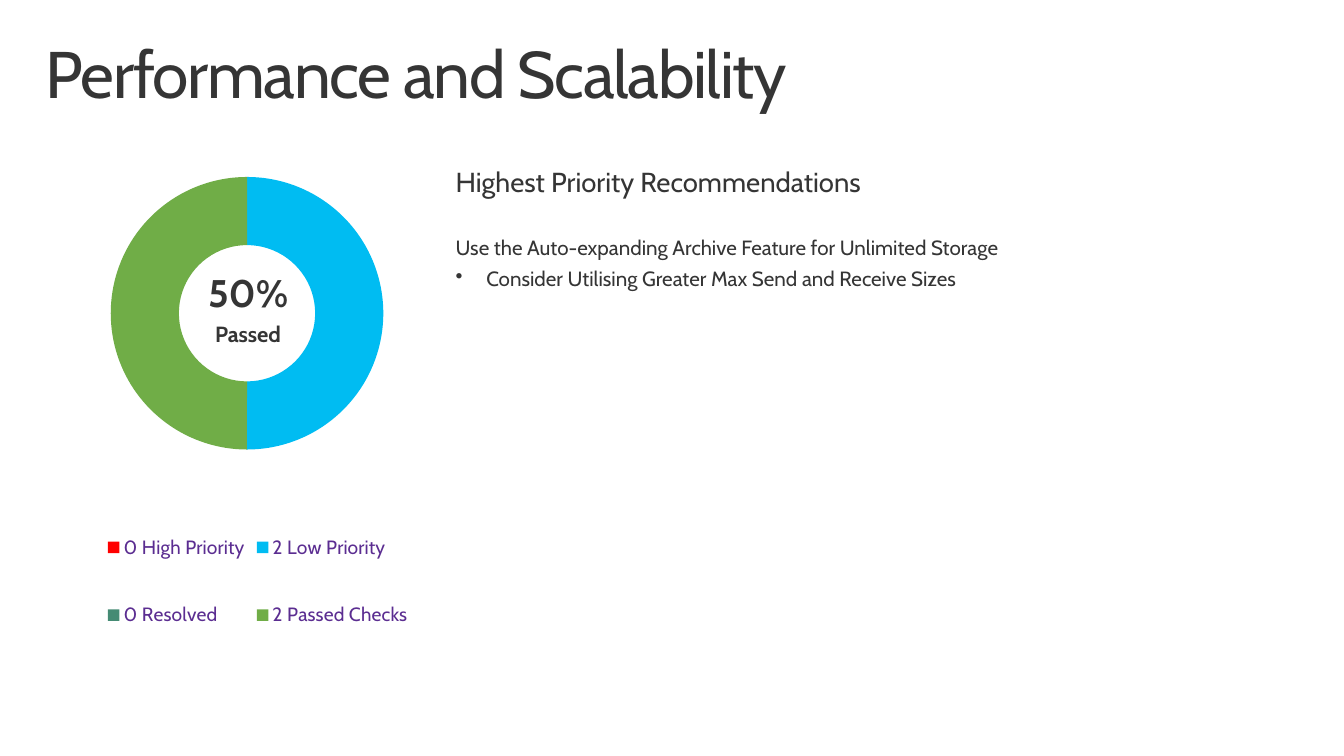
import lxml.etree
import pptx
import pptx.chart.data
import pptx.dml.color
import pptx.enum.chart
import pptx.enum.text
import pptx.oxml
import pptx.oxml.ns
import pptx.util
from pptx.util import Cm

COLORS = {
    "text": "353535",
    "legend": "5B2D91",
    "high": "FF0000",
    "low": "00BCF2",
    "resolved": "458B74",
    "passed": "70AD47",
    "gap_navy": "001D49",
    "gap_purple": "A3008F",
    "gap_grey": "D1D1D1",
}

CHECKS = [
    ("0 High Priority ", 0, "high"),
    ("", None, "gap_navy"),
    ("2 Low Priority", 50, "low"),
    ("", None, "gap_purple"),
    ("0 Resolved", 0, "resolved"),
    ("", None, "gap_grey"),
    ("2 Passed Checks", 50, "passed"),
]


def chart_element(xml):
    return pptx.oxml.parse_xml(xml.replace(">", f" {pptx.oxml.ns.nsdecls('c')}>", 1))


def set_layout(parent, box, inner=False):
    for layout in parent.findall(pptx.oxml.ns.qn("c:layout")):
        parent.remove(layout)
    target = '<c:layoutTarget val="inner"/>' if inner else ""
    modes = "".join(f'<c:{axis}Mode val="edge"/>' for axis in "xy")
    sizes = "".join(f'<c:{side} val="{share}"/>' for side, share in zip("xywh", box))
    layout = chart_element(
        f"<c:layout><c:manualLayout>{target}{modes}{sizes}</c:manualLayout></c:layout>"
    )
    if inner:
        parent.insert(0, layout)
    else:
        parent.find(pptx.oxml.ns.qn("c:legendPos")).addnext(layout)


class SlideBuilder:
    font_name = "Cabin"

    def __init__(self, slide):
        self.slide = slide

    def style(self, font, size, color="text", bold=False):
        font.name = self.font_name
        font.size = pptx.util.Pt(size)
        font.bold = bold
        font.color.rgb = pptx.dml.color.RGBColor.from_string(COLORS[color])

    def text_box(self, left, top, width, height, inset_x=0.51, inset_y=0.41):
        box = self.slide.shapes.add_textbox(Cm(left), Cm(top), Cm(width), Cm(height))
        frame = box.text_frame
        frame.word_wrap = True
        frame.vertical_anchor = pptx.enum.text.MSO_ANCHOR.TOP
        frame.margin_left = frame.margin_right = Cm(inset_x)
        frame.margin_top = frame.margin_bottom = Cm(inset_y)
        return frame

    def paragraph(self, frame, words, size, bold=False, centered=False,
                  before=0, after=6, bullet=False, tracking=0):
        first = frame.paragraphs[0]
        paragraph = frame.add_paragraph() if first.runs else first
        paragraph.line_spacing = 0.9
        paragraph.space_before = pptx.util.Pt(before)
        paragraph.space_after = pptx.util.Pt(after)
        if centered:
            paragraph.alignment = pptx.enum.text.PP_ALIGN.CENTER
        run = paragraph.add_run()
        run.text = words
        self.style(run.font, size, bold=bold)
        if tracking:
            run.font._element.set("spc", str(tracking * 100))
        if bullet:
            properties = paragraph._p.get_or_add_pPr()
            properties.set("marL", str(Cm(0.79)))
            properties.set("indent", str(-Cm(0.79)))
            mark = lxml.etree.SubElement(properties, pptx.oxml.ns.qn("a:buChar"))
            mark.set("char", "•")

    def doughnut(self, left, top, width, height, checks):
        data = pptx.chart.data.CategoryChartData()
        data.categories = [label for label, _, _ in checks]
        data.add_series("Series 1", [share for _, share, _ in checks])
        chart = self.slide.shapes.add_chart(
            pptx.enum.chart.XL_CHART_TYPE.DOUGHNUT,
            Cm(left), Cm(top), Cm(width), Cm(height), data,
        ).chart
        self.style(chart.font, 10)
        chart.has_title = False
        plot = chart.plots[0]
        plot.has_data_labels = False
        plot.vary_by_categories = True
        for index, (_, _, color) in enumerate(checks):
            segment = plot.series[0].points[index].format
            segment.fill.solid()
            segment.fill.fore_color.rgb = pptx.dml.color.RGBColor.from_string(COLORS[color])
            segment.line.fill.background()

        chart.has_legend = True
        legend = chart.legend
        legend.position = pptx.enum.chart.XL_LEGEND_POSITION.BOTTOM
        legend.include_in_layout = False
        self.style(legend.font, 14, "legend")

        chart_space = chart._chartSpace
        chart_space.find(".//" + pptx.oxml.ns.qn("c:holeSize")).set("val", "68")
        set_layout(chart_space.chart.plotArea, (0.232, 0.074, 0.571, 0.558), inner=True)
        set_layout(legend._element, (0.21, 0.66, 0.66, 0.31))
        legend_position = legend._element.find(pptx.oxml.ns.qn("c:legendPos"))
        for index in reversed(range(len(checks))):
            if not checks[index][0]:
                legend_position.addnext(chart_element(
                    f'<c:legendEntry><c:idx val="{index}"/><c:delete val="1"/></c:legendEntry>'
                ))


def main():
    presentation = pptx.Presentation()
    presentation.slide_width = Cm(34.54)
    presentation.slide_height = Cm(19.43)
    builder = SlideBuilder(presentation.slides.add_slide(presentation.slide_layouts[6]))

    title = builder.text_box(0.76, 0.81, 33.02, 2.54, inset_x=0.41, inset_y=0.25)
    builder.paragraph(title, "Performance and Scalability", 48, after=0, tracking=-1)

    builder.doughnut(0, 2.79, 12.27, 14.91, CHECKS)

    score = builder.text_box(4.57, 6.63, 3.61, 8.1)
    builder.paragraph(score, "50%", 28, bold=True, centered=True)
    builder.paragraph(score, "Passed", 16, bold=True, centered=True)

    advice = builder.text_box(11.2, 3.94, 21.36, 3.18)
    builder.paragraph(advice, "Highest Priority Recommendations", 20)
    builder.paragraph(
        advice, "Use the Auto-expanding Archive Feature for Unlimited Storage", 15, before=22.4
    )
    builder.paragraph(
        advice, "Consider Utilising Greater Max Send and Receive Sizes", 15, bullet=True
    )

    presentation.save("out.pptx")


if __name__ == "__main__":
    main()
